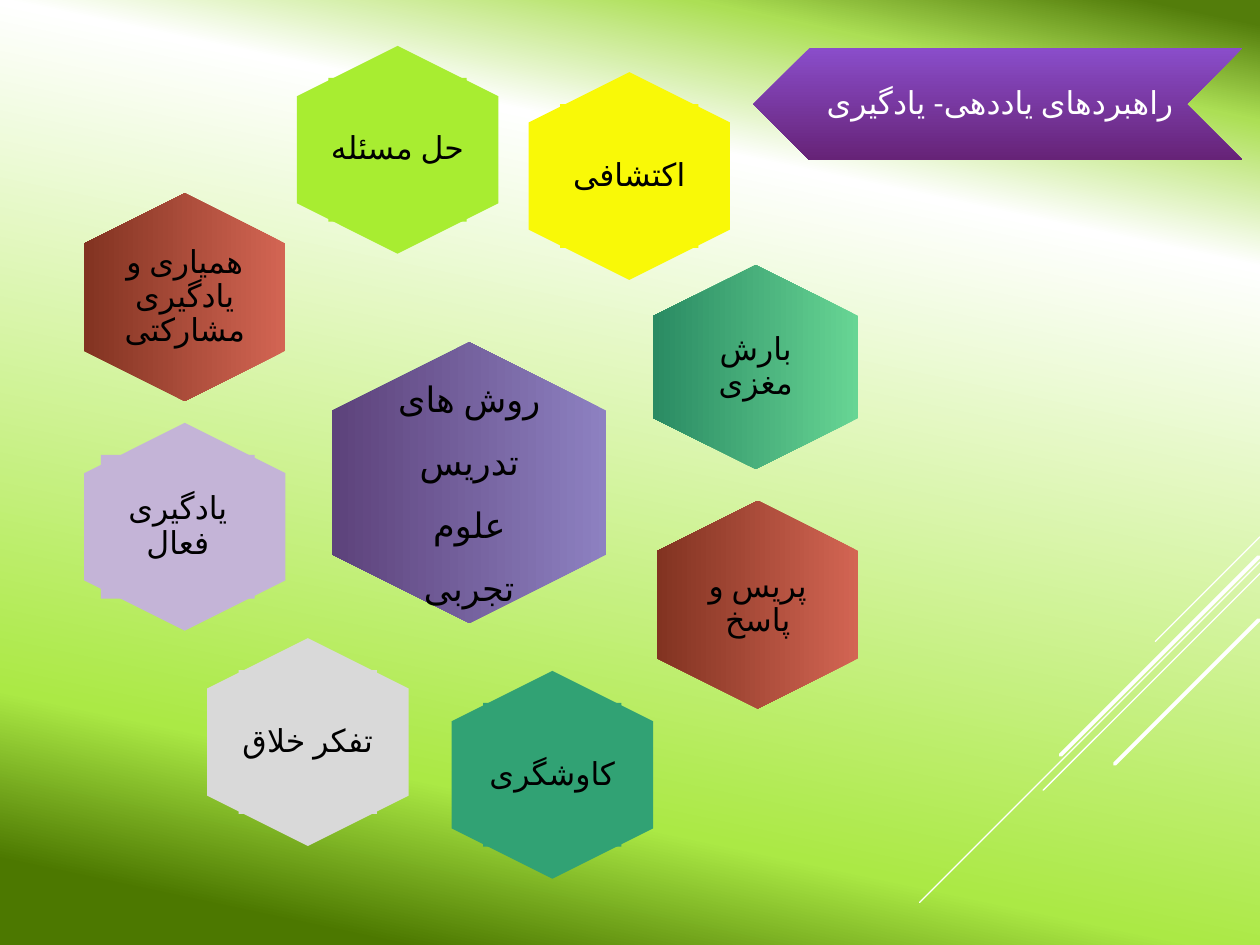
from lxml import etree
from pptx import Presentation
from pptx.dml.color import RGBColor
from pptx.enum.shapes import MSO_CONNECTOR, MSO_SHAPE
from pptx.enum.text import MSO_ANCHOR, PP_ALIGN
from pptx.oxml.ns import qn
from pptx.util import Cm, Pt

STRAIGHT = MSO_CONNECTOR.STRAIGHT
HEXAGON, CHEVRON, RECTANGLE = MSO_SHAPE.HEXAGON, MSO_SHAPE.CHEVRON, MSO_SHAPE.RECTANGLE
MIDDLE, CENTER = MSO_ANCHOR.MIDDLE, PP_ALIGN.CENTER

BLACK = RGBColor(0x00, 0x00, 0x00)
WHITE = RGBColor(0xFF, 0xFF, 0xFF)
OLIVE = RGBColor(0x53, 0x7D, 0x0B)
LIGHT_GREEN = RGBColor(0xAC, 0xDF, 0x55)
LEAF = RGBColor(0xAB, 0xE9, 0x45)
DARK_GREEN = RGBColor(0x4C, 0x78, 0x00)
VIOLET = RGBColor(0x8A, 0x4D, 0xCA)
PLUM = RGBColor(0x66, 0x23, 0x77)
LAVENDER = RGBColor(0x8D, 0x81, 0xC1)
GRAPE = RGBColor(0x5D, 0x42, 0x7B)
MINT = RGBColor(0x67, 0xD5, 0x94)
PINE = RGBColor(0x2A, 0x8B, 0x63)
CORAL = RGBColor(0xD3, 0x65, 0x53)
BRICK = RGBColor(0x82, 0x33, 0x21)
TEAL = RGBColor(0x31, 0xA2, 0x74)
GREY = RGBColor(0xD9, 0xD9, 0xD9)
LILAC = RGBColor(0xC4, 0xB4, 0xD7)
LIME = RGBColor(0xA8, 0xED, 0x31)
YELLOW = RGBColor(0xF9, 0xF9, 0x07)

BACKDROP = [(2, OLIVE), (10, LIGHT_GREEN), (22, WHITE), (79, LEAF), (93, DARK_GREEN)]
RAYS = [
    (25.4, 10.82, 2.11, 0.75),
    (25.4, 11.33, 6.86, 0.75),
    (25.4, 11.56, 4.37, 0.75),
    (25.37, 11.23, 3.99, 2.25),
    (25.37, 12.5, 2.9, 2.25),
]
CELL = (4.19, 4.06)
CELL_LABEL = (2.79, 2.9)
METHODS = [
    ("پریس و پاسخ", 13.18, 10.16, [CORAL, BRICK]),
    ("کاوشگری", 9.04, 13.59, [TEAL]),
    ("تفکر خلاق", 4.11, 12.93, [GREY]),
    ("همیاری و یادگیری مشارکتی", 1.63, 3.96, [CORAL, BRICK]),
    ("حل مسئله", 5.92, 0.99, [LIME]),
    ("اکتشافی", 10.59, 1.52, [YELLOW]),
]


def set_all(target, values):
    for name, value in values.items():
        setattr(target, name, value)


def paint_gradient(fill, holder, stops, angle):
    fill.gradient()
    gradient = holder.find(".//" + qn("a:gradFill"))
    gradient.set("rotWithShape", "1")
    stop_list = gradient.find(qn("a:gsLst"))
    for stop in list(stop_list):
        stop_list.remove(stop)
    for position, color in stops:
        stop = etree.SubElement(stop_list, qn("a:gs"), pos=str(position * 1000))
        etree.SubElement(stop, qn("a:srgbClr"), val=str(color))
    line = gradient.find(qn("a:lin"))
    line.set("ang", str(angle * 60000))
    line.set("scaled", "0")


def add_figure(page, kind, box, colors):
    figure = page.shapes.add_shape(kind, *map(Cm, box))
    figure.shadow.inherit = False
    figure.line.fill.background()
    if len(colors) == 1:
        figure.fill.solid()
        figure.fill.fore_color.rgb = colors[0]
    else:
        stops = list(zip((0, 100), colors))
        paint_gradient(figure.fill, figure._element.spPr, stops, 90)
    return figure


def write_label(label, text, insets, size=18, spacing=0.9, font="Quicksand", color=BLACK):
    frame = label.text_frame
    sides = ("margin_left", "margin_top", "margin_right", "margin_bottom")
    set_all(frame, dict(zip(sides, map(Cm, insets))))
    set_all(frame, {"word_wrap": True, "vertical_anchor": MIDDLE})
    para = frame.paragraphs[0]
    set_all(para, {
        "alignment": CENTER,
        "line_spacing": spacing,
        "space_after": Pt(0.35 * size),
    })
    para._p.get_or_add_pPr().set("rtl", "1")
    span = para.add_run()
    span.text = text
    set_all(span.font, {"size": Pt(size), "name": font})
    span.font.color.rgb = color
    span._r.get_or_add_rPr().set("lang", "fa-IR")


def add_rays(page):
    for left, top, reach, weight in RAYS:
        ray = page.shapes.add_connector(
            STRAIGHT, Cm(left), Cm(top), Cm(left - reach), Cm(top + reach))
        ray.line.color.rgb = WHITE
        ray.line.width = Pt(weight)
        properties = ray._element.spPr
        properties.find(qn("a:ln")).set("cap", "rnd")
        etree.SubElement(properties, qn("a:effectLst"))


def add_title(page, left, top, width, height):
    ribbon = add_figure(page, CHEVRON, (left, top, width, height), [VIOLET, PLUM])
    ribbon._element.spPr.find(qn("a:xfrm")).set("flipH", "1")
    label = page.shapes.add_textbox(Cm(left + 1.17), Cm(top), Cm(width - 2.34), Cm(height))
    write_label(label, "راهبردهای یاددهی- یادگیری", (0.13, 0.08, 0.05, 0.08),
                font="Cabin", color=WHITE)


def add_hexagon(page, text, box, label_size, colors, inset=0, shift=0, **style):
    left, top, width, height = box
    label_width, label_height = label_size
    add_figure(page, HEXAGON, box, colors).rotation = 90
    label_box = (left + (width - label_width) / 2 + shift,
                 top + (height - label_height) / 2, label_width, label_height)
    if len(colors) == 1:
        label = add_figure(page, RECTANGLE, label_box, colors)
    else:
        label = page.shapes.add_textbox(*map(Cm, label_box))
    write_label(label, text, [inset] * 4, **style)


def main():
    deck = Presentation()
    set_all(deck, {"slide_width": Cm(25.4), "slide_height": Cm(19.05)})
    page = deck.slides.add_slide(deck.slide_layouts[6])
    paint_gradient(page.background.fill, page._element, BACKDROP, 102)
    add_rays(page)
    add_title(page, 15.19, 0.97, 9.86, 2.26)
    add_hexagon(page, "روش های تدریس علوم تجربی", (6.63, 6.96, 5.66, 5.54),
                (3.71, 3.78), [LAVENDER, GRAPE], inset=0.2, size=20, spacing=1.5)
    add_hexagon(page, "بارش مغزی", (13.18, 5.33, 4.11, 4.14),
                (2.84, 2.82), [MINT, PINE], inset=0.18)
    add_hexagon(page, "یادگیری فعال", (1.63, 8.59, *CELL), (3.1, 2.9), [LILAC], shift=-0.14)
    for text, left, top, colors in METHODS:
        add_hexagon(page, text, (left, top, *CELL), CELL_LABEL, colors)
    deck.save("out.pptx")


if __name__ == "__main__":
    main()
